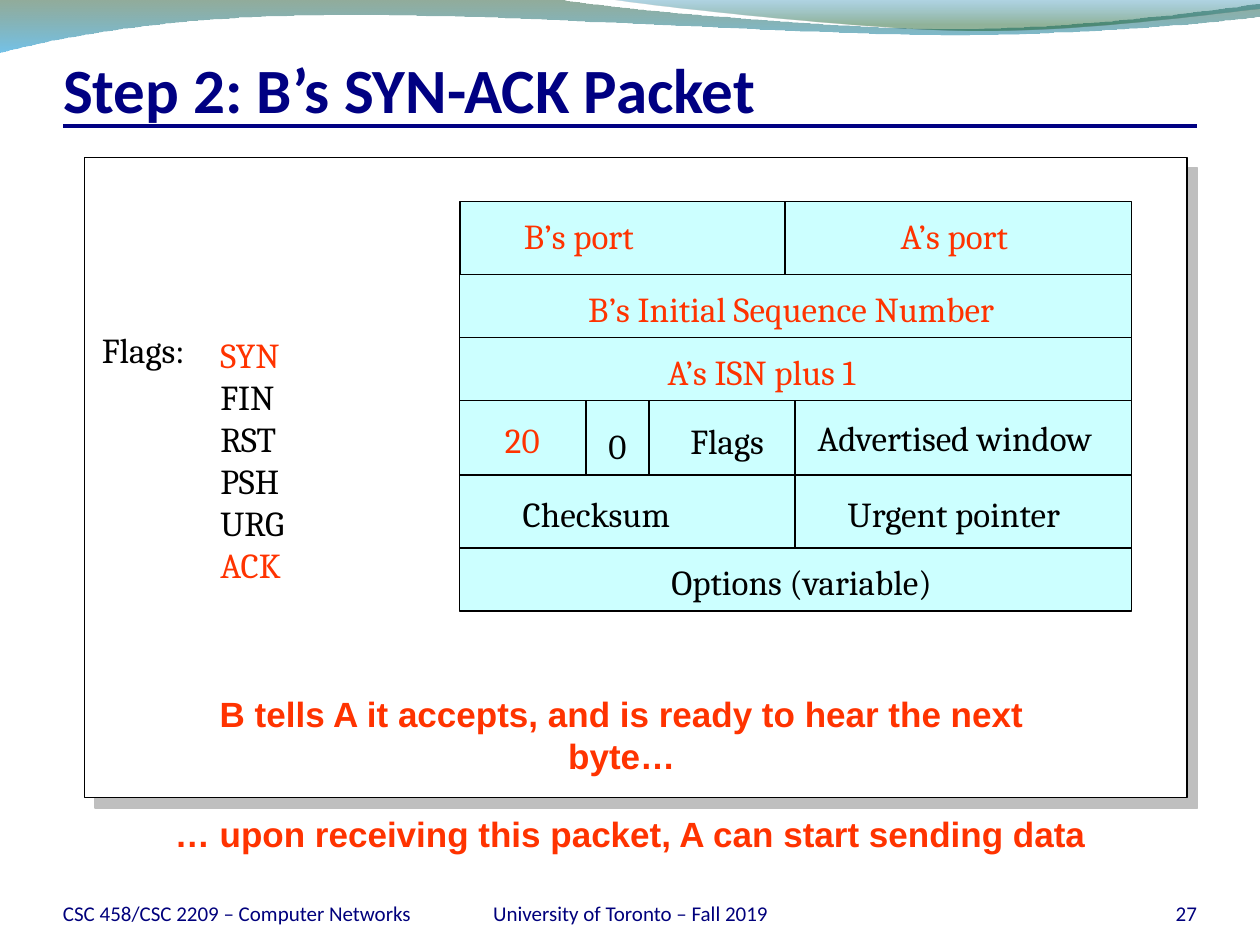
from lxml.etree import SubElement
from pptx import Presentation
from pptx.dml.color import RGBColor
from pptx.enum.shapes import MSO_CONNECTOR, MSO_SHAPE
from pptx.enum.text import MSO_ANCHOR, PP_ALIGN
from pptx.oxml.ns import qn
from pptx.util import Inches, Pt

NAVY, FOOTER, RED, BLACK = "000082", "00007C", "FF3300", "000000"
CELL, WHITE, SHADOW = "CCFFFF", "FFFFFF", "BFBFBF"
TABLE_LEFT, TABLE_TOP = 3.65, 1.6
# Height of each header row and the widths of its cells
ROWS = [
    (0.58, [2.58, 2.75]),
    (0.5, [5.33]),
    (0.5, [5.33]),
    (0.59, [2.66, 2.67]),
    (0.58, [2.66, 2.67]),
    (0.5, [5.33]),
]
FIELD_LABELS = [
    ("B’s port", 4.06, 1.65, 1.14, RED),
    ("A’s port", 7.05, 1.65, 1.14, RED),
    ("B’s Initial Sequence Number", 4.57, 2.23, 3.71, RED),
    ("A’s ISN plus 1", 5.2, 2.73, 1.95, RED),
    ("Advertised window", 6.39, 3.26, 2.52, BLACK),
    ("Flags", 5.38, 3.28, 0.88, BLACK),
    ("0", 4.73, 3.32, 0.36, BLACK),
    ("Checksum", 4.05, 3.86, 1.51, BLACK),
    ("Urgent pointer", 6.63, 3.86, 1.96, BLACK),
    ("Options (variable)", 5.23, 4.4, 2.39, BLACK),
]
FLAGS = [("SYN", RED), ("FIN", BLACK), ("RST", BLACK),
         ("PSH", BLACK), ("URG", BLACK), ("ACK", RED)]
# Each wave is a start point, then line ends (2 numbers) or Bézier curves (6)
LEFT_WAVE = [
    (0, -0.01), (4.4, -0.01),
    (4.76, 0.06, 6.64, 0.23, 7.58, 0.23), (8.53, 0.23, 9.58, 0.09, 10, 0.03),
    (10.01, 0.13),
    (9.83, 0.16, 8.7, 0.28, 7.46, 0.28), (6.22, 0.27, 3.82, 0.1, 2.57, 0.12),
    (1.29, 0.13, 0.46, 0.3, -0.01, 0.42),
]
RIGHT_WAVE = [
    (4.79, -0.01),
    (5.09, 0.04, 6.82, 0.23, 7.69, 0.24), (8.56, 0.25, 9.61, 0.11, 10, 0.07),
    (10, -0.01),
]


def color(value):
    return RGBColor.from_string(value)


def add_color(parent, value, opacity=100):
    element = SubElement(parent, qn("a:srgbClr"), val=value)
    SubElement(element, qn("a:alpha"), val=str(opacity * 1000))


def curve_points(start, curve, steps=16):
    """Return points along a cubic Bézier curve, without its start."""
    corners = [start, curve[:2], curve[2:4], curve[4:]]
    points = []
    for step in range(1, steps + 1):
        t = step / steps
        weights = [(1 - t) ** 3, 3 * t * (1 - t) ** 2, 3 * t ** 2 * (1 - t), t ** 3]
        points.append(tuple(sum(w * c[axis] for w, c in zip(weights, corners))
                            for axis in (0, 1)))
    return points


def add_wave(slide, outline, stops):
    """Draw a wave with a downward gradient of (position, colour, opacity)."""
    points = [outline[0]]
    for segment in outline[1:]:
        points += [segment] if len(segment) == 2 else curve_points(points[-1], segment)
    points = [(Inches(x), Inches(y)) for x, y in points]
    builder = slide.shapes.build_freeform(*points[0])
    builder.add_line_segments(points[1:], close=True)
    shape = builder.convert_to_shape()
    shape.shadow.inherit = False
    shape.line.fill.background()
    shape.fill.gradient()
    gradient = shape._element.spPr.find(qn("a:gradFill"))
    for child in list(gradient):
        gradient.remove(child)
    stop_list = SubElement(gradient, qn("a:gsLst"))
    for position, value, opacity in stops:
        stop = SubElement(stop_list, qn("a:gs"), pos=str(position * 1000))
        add_color(stop, value, opacity)
    SubElement(gradient, qn("a:lin"), ang="5400000", scaled="0")


def add_box(slide, left, top, width, height, fill):
    shape = slide.shapes.add_shape(
        MSO_SHAPE.RECTANGLE, Inches(left), Inches(top), Inches(width), Inches(height))
    shape.shadow.inherit = False
    shape.fill.solid()
    shape.fill.fore_color.rgb = color(fill)
    shape.line.color.rgb = color(BLACK)
    shape.line.width = Pt(0.75)
    return shape


def add_panel(slide):
    panel = add_box(slide, 0.67, 1.25, 8.75, 5.08, WHITE)
    effects = panel._element.spPr.find(qn("a:effectLst"))
    shadow = SubElement(effects, qn("a:outerShdw"), dist=str(Pt(8.5)),
                        dir="2700000", algn="ctr", rotWithShape="0")
    add_color(shadow, SHADOW)


def add_line(slide, x1, y1, x2, y2, line_color=BLACK, width=0.75):
    line = slide.shapes.add_connector(
        MSO_CONNECTOR.STRAIGHT, Inches(x1), Inches(y1), Inches(x2), Inches(y2))
    line.line.color.rgb = color(line_color)
    line.line.width = Pt(width)
    SubElement(line._element.spPr, qn("a:effectLst"))


def format_font(font, name, size, value, bold=False):
    font.name = name
    font.size = Pt(size)
    font.bold = bold
    font.color.rgb = color(value)


def add_text(slide, lines, left, top, width, height=0.43, font="Cambria", size=20,
             bold=False, align=PP_ALIGN.LEFT, wrap=False, fill=None):
    """Add a text box with one paragraph for each (text, colour) line."""
    box = slide.shapes.add_textbox(Inches(left), Inches(top), Inches(width), Inches(height))
    if fill:
        box.fill.solid()
        box.fill.fore_color.rgb = color(fill)
    frame = box.text_frame
    frame.word_wrap = wrap
    frame.text = "\n".join(text for text, _ in lines)
    for paragraph, (_, value) in zip(frame.paragraphs, lines):
        paragraph.alignment = align
        format_font(paragraph.font, font, size, value, bold)
    return frame


def set_bottom_anchor(frame, top_margin=0):
    frame.vertical_anchor = MSO_ANCHOR.BOTTOM
    frame.margin_left = frame.margin_right = frame.margin_bottom = 0
    frame.margin_top = Inches(top_margin)


def set_title(slide, text):
    title = slide.shapes.title
    title.left, title.top = Inches(0.5), Inches(0.33)
    title.width, title.height = Inches(9), Inches(0.67)
    title.text_frame.text = text
    set_bottom_anchor(title.text_frame, 0.05)
    paragraph = title.text_frame.paragraphs[0]
    paragraph.alignment = PP_ALIGN.LEFT
    format_font(paragraph.font, "Calibri", 36, NAVY, bold=True)


def add_footer(slide, text, left, width, align):
    frame = add_text(slide, [(text, FOOTER)], left, 6.95, width, 0.4,
                     font="Calibri", size=12, align=align, wrap=True)
    set_bottom_anchor(frame)


def add_packet_header(slide):
    top = TABLE_TOP
    for height, widths in ROWS:
        left = TABLE_LEFT
        for width in widths:
            add_box(slide, left, top, width, height, CELL)
            left += width
        top += height
    for x in (4.65, 5.15):
        add_line(slide, x, 3.18, x, 3.77)
    for text, left, top, width, value in FIELD_LABELS:
        add_text(slide, [(text, value)], left, top, width, fill=CELL)
    add_text(slide, [("20", RED)], 3.91, 3.27, 1.17, wrap=True)


def add_remark(slide, text, left, top, width, wrap=False):
    add_text(slide, [(text, RED)], left, top, width, font="Arial", bold=True,
             align=PP_ALIGN.CENTER, wrap=wrap)


def main():
    presentation = Presentation()
    presentation.slide_width, presentation.slide_height = Inches(10), Inches(7.5)
    slide = presentation.slides.add_slide(presentation.slide_layouts[5])
    add_wave(slide, LEFT_WAVE, [(0, "0F461E", 45), (100, "0090D6", 55)])
    add_wave(slide, RIGHT_WAVE, [(0, "0076AF", 30), (80, "0D5821", 45)])
    add_line(slide, 0.5, 1, 9.5, 1, NAVY, 2.25)
    set_title(slide, "Step 2: B’s SYN-ACK Packet")
    add_footer(slide, "CSC 458/CSC 2209 – Computer Networks", 0.5, 2.83, PP_ALIGN.LEFT)
    add_footer(slide, "27", 8.67, 0.83, PP_ALIGN.RIGHT)
    add_footer(slide, "University of Toronto – Fall 2019", 3.42, 3.17, PP_ALIGN.CENTER)
    add_panel(slide)
    add_packet_header(slide)
    add_text(slide, [("Flags:", BLACK)], 0.71, 2.56, 0.96)
    add_text(slide, FLAGS, 1.65, 2.6, 0.82, 2.1)
    add_remark(slide, "B tells A it accepts, and is ready to hear the next byte…",
               1.23, 5.45, 7.41, wrap=True)
    add_remark(slide, "… upon receiving this packet, A can start sending data",
               1.29, 6.4, 7.43)
    presentation.save("out.pptx")


if __name__ == "__main__":
    main()
